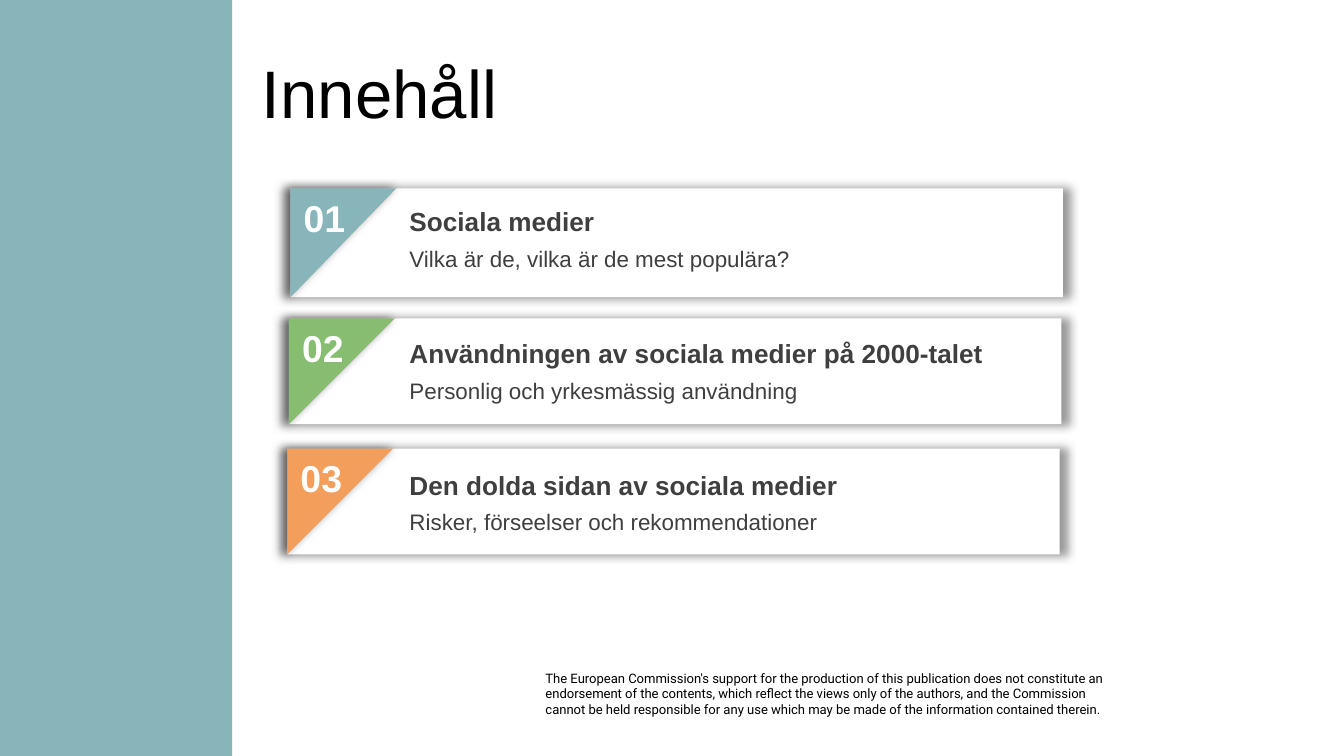
from lxml import etree
from pptx import Presentation
from pptx.dml.color import RGBColor
from pptx.enum.shapes import MSO_SHAPE
from pptx.enum.text import MSO_ANCHOR
from pptx.oxml import parse_xml
from pptx.oxml.ns import nsdecls
from pptx.util import Cm, Pt

TEAL = RGBColor(0x87, 0xB5, 0xBA)
GREEN = RGBColor(0x86, 0xBD, 0x70)
ORANGE = RGBColor(0xF3, 0x9E, 0x5A)
WHITE = RGBColor(0xFF, 0xFF, 0xFF)
BLACK = RGBColor(0x00, 0x00, 0x00)
GREY = RGBColor(0x3F, 0x3F, 0x3F)

# Card grid, in centimetres: each row steps down and slightly left
CARD_LEFT, CARD_TOP, CARD_WIDTH = 5.49, 3.56, 14.6
ROW_STEP, ROW_SHIFT = 2.46, 0.03
CORNER_WIDTH = 2.0

TOPICS = [
    ("Sociala medier", "Vilka är de, vilka är de mest populära?", TEAL, 2.06),
    ("Användningen av sociala medier på 2000-talet",
     "Personlig och yrkesmässig användning", GREEN, 2.0),
    ("Den dolda sidan av sociala medier",
     "Risker, förseelser och rekommendationer", ORANGE, 2.0),
]

DISCLAIMER = [
    "The European Commission's support for the production of this publication "
    "does not constitute an endorsement of the contents, which reflect the "
    "views only of the authors, and the Commission",
    "cannot be held responsible for any use which may be made of the "
    "information contained therein.",
]


def add_block(page, kind, left, top, width, height, color):
    """Add a plain filled shape without a line or shadow."""
    block = page.shapes.add_shape(kind, Cm(left), Cm(top), Cm(width), Cm(height))
    block.shadow.inherit = False
    block.fill.solid()
    block.fill.fore_color.rgb = color
    block.line.fill.background()
    return block


def add_glow_shadow(block):
    """Put a soft, slightly enlarged shadow behind a shape."""
    effects = block.element.spPr.find(
        "{http://schemas.openxmlformats.org/drawingml/2006/main}effectLst")
    shadow = parse_xml(
        f'<a:outerShdw {nsdecls("a")} blurRad="63500" sx="102000" sy="102000" '
        'algn="ctr" rotWithShape="0"><a:prstClr val="black">'
        '<a:alpha val="40000"/></a:prstClr></a:outerShdw>')
    effects.append(shadow)


def add_text(page, left, top, width, height, lines, size, color,
             font="Arial", bold=False, margins=True, anchor=MSO_ANCHOR.TOP):
    """Add a wrapping text box with one paragraph per line."""
    box = page.shapes.add_textbox(Cm(left), Cm(top), Cm(width), Cm(height))
    frame = box.text_frame
    frame.word_wrap = True
    frame.vertical_anchor = anchor
    if not margins:
        frame.margin_left = frame.margin_right = 0
        frame.margin_top = frame.margin_bottom = 0
    for index, line in enumerate(lines):
        para = frame.add_paragraph() if index else frame.paragraphs[0]
        span = para.add_run()
        span.text = line
        span.font.name = font
        span.font.size = Pt(size)
        span.font.bold = bold
        span.font.color.rgb = color


def add_card(page, row, heading, detail, color, height):
    """Add a white card with a numbered corner, a heading and a detail line."""
    left = CARD_LEFT - row * ROW_SHIFT
    top = CARD_TOP + row * ROW_STEP
    card = add_block(page, MSO_SHAPE.RECTANGLE, left, top, CARD_WIDTH, height, WHITE)
    add_glow_shadow(card)

    # The quarter turn swaps the sides, so centre the unturned triangle
    offset = (CORNER_WIDTH - height) / 2
    corner = add_block(page, MSO_SHAPE.RIGHT_TRIANGLE, left + offset, top - offset,
                       height, CORNER_WIDTH, color)
    corner.rotation = 90
    add_glow_shadow(corner)

    add_text(page, left, top, 1.47, 1.12, [f"{row + 1:02d}"], 20, WHITE, bold=True)
    text_top = top + 0.2 + row * 0.03
    add_text(page, 7.49, text_top, 12.19, 0.86, [heading], 14, GREY, bold=True)
    add_text(page, 7.49, text_top + 0.75, 12.19, 0.76, [detail], 12, GREY)


def main():
    deck = Presentation()
    deck.slide_width, deck.slide_height = Cm(25.4), Cm(14.29)
    page = deck.slides.add_slide(deck.slide_layouts[6])

    # Disclaimer and side band
    add_text(page, 10.31, 12.67, 10.59, 0.89, DISCLAIMER, 7, BLACK,
             font="Roboto", margins=False)
    add_block(page, MSO_SHAPE.RECTANGLE, 0, 0, 4.39, 14.29, TEAL)

    # Title
    add_text(page, 4.7, 0.94, 18.29, 1.6, ["Innehåll"], 36, BLACK,
             anchor=MSO_ANCHOR.MIDDLE)

    # Contents
    for row, topic in enumerate(TOPICS):
        add_card(page, row, *topic)

    deck.save("out.pptx")


if __name__ == "__main__":
    main()
